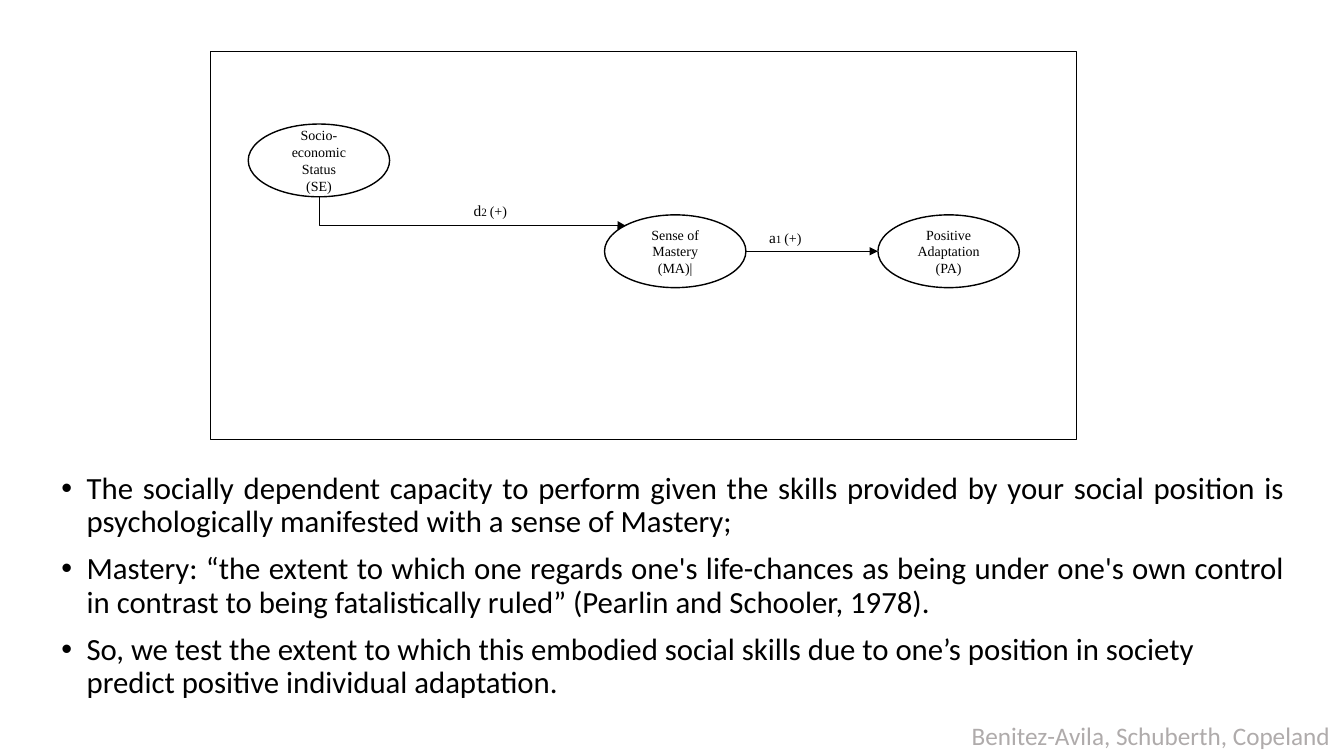
from pptx import Presentation
from pptx.dml.color import RGBColor
from pptx.enum.shapes import MSO_CONNECTOR as Connector, MSO_SHAPE as Shape
from pptx.enum.text import MSO_ANCHOR as Anchor, MSO_AUTO_SIZE as AutoSize, PP_ALIGN as Align
from pptx.oxml.ns import qn
from pptx.oxml.xmlchemy import OxmlElement
from pptx.util import Pt

BLACK, WHITE, GREY = "000000", "FFFFFF", "AFABAB"
SERIF, SANS = "Times New Roman", "Calibri"
OVAL_WIDTH, OVAL_HEIGHT = 101, 52

STATEMENTS = [
    ("The socially dependent capacity to perform given the skills provided by your "
     "social position is psychologically manifested with a sense of Mastery; ", Align.JUSTIFY),
    ("Mastery: “the extent to which one regards one's life-chances as being under one's own "
     "control in contrast to being fatalistically ruled” (Pearlin and Schooler, 1978).",
     Align.JUSTIFY),
    ("So, we test the extent to which this embodied social skills due to one’s position in "
     "society predict positive individual adaptation.", Align.LEFT),
]


def color(value):
    return RGBColor.from_string(value)


def format_run(run, size, font, value=BLACK):
    run.font.size = Pt(size)
    run.font.name = font
    run.font.color.rgb = color(value)


def add_outlined(slide, kind, left, top, width, height, fill=None):
    shape = slide.shapes.add_shape(kind, Pt(left), Pt(top), Pt(width), Pt(height))
    shape.shadow.inherit = False
    if fill:
        shape.fill.solid()
        shape.fill.fore_color.rgb = color(fill)
    else:
        shape.fill.background()
    shape.line.color.rgb = color(BLACK)
    shape.line.width = Pt(1)
    return shape


def add_construct(slide, left, top, text):
    shape = add_outlined(slide, Shape.OVAL, left, top, OVAL_WIDTH, OVAL_HEIGHT, WHITE)
    text_frame = shape.text_frame
    text_frame.text = text
    text_frame.word_wrap = True
    text_frame.vertical_anchor = Anchor.MIDDLE
    for paragraph in text_frame.paragraphs:
        paragraph.alignment = Align.CENTER
        format_run(paragraph.runs[0], 10, SERIF)


def add_arrow(slide, kind, start, end):
    connector = slide.shapes.add_connector(kind, *(Pt(value) for value in start + end))
    connector.line.color.rgb = color(BLACK)
    connector.line.width = Pt(0.5)
    head = OxmlElement("a:tailEnd")
    head.set("type", "triangle")
    connector.line._get_or_add_ln().append(head)
    connector._element.spPr.append(OxmlElement("a:effectLst"))
    return connector


def add_down_then_right_arrow(slide, start, end, bend):
    center_x, center_y = (start[0] + end[0]) / 2, (start[1] + end[1]) / 2
    half_run, half_drop = (end[0] - start[0]) / 2, (end[1] - start[1]) / 2
    connector = add_arrow(slide, Connector.ELBOW,
                          (center_x + half_drop, center_y - half_run),
                          (center_x - half_drop, center_y + half_run))
    properties = connector._element.spPr
    properties.find(qn("a:xfrm")).set("rot", str(270 * 60000))
    geometry = properties.find(qn("a:prstGeom"))
    guides = geometry.find(qn("a:avLst"))
    if guides is None:
        guides = OxmlElement("a:avLst")
        geometry.append(guides)
    guide = OxmlElement("a:gd")
    guide.set("name", "adj1")
    guide.set("fmla", f"val {round(bend * 100000)}")
    guides.append(guide)


def add_path_label(slide, left, top, letter, number):
    box = slide.shapes.add_textbox(Pt(left), Pt(top), Pt(75.6), Pt(20.9))
    box.text_frame.word_wrap = True
    box.text_frame.auto_size = AutoSize.SHAPE_TO_FIT_TEXT
    paragraph = box.text_frame.paragraphs[0]
    for text, size in ((letter, 11), (f"{number} ", 8), ("(+)", 10)):
        run = paragraph.add_run()
        run.text = text
        format_run(run, size, SERIF)


def add_path_model(slide, left, top, width, height):
    add_outlined(slide, Shape.RECTANGLE, left, top, width, height)
    status_left, status_top = left + 26.8, top + 51.6
    mastery_left, adaptation_left = left + 281.3, left + 476.6
    lower_top = top + 116.5
    lower_middle = lower_top + OVAL_HEIGHT / 2
    add_construct(slide, mastery_left, lower_top, "Sense of Mastery\n(MA)|")
    add_construct(slide, adaptation_left, lower_top, "Positive Adaptation\n(PA)")
    add_construct(slide, status_left, status_top, "Socio-economic\nStatus\n(SE)")
    add_arrow(slide, Connector.STRAIGHT,
              (mastery_left + OVAL_WIDTH, lower_middle), (adaptation_left, lower_middle))
    add_down_then_right_arrow(
        slide, (status_left + OVAL_WIDTH / 2, status_top + OVAL_HEIGHT),
        (mastery_left + 15.2, lower_top + 7.8), 0.986)
    add_path_label(slide, left + 391.7, top + 122.4, "a", 1)
    add_path_label(slide, left + 180.7, top + 103, "d", 2)


def add_statements(slide, left, top, width, height):
    body = slide.placeholders[1]
    body.left, body.top, body.width, body.height = Pt(left), Pt(top), Pt(width), Pt(height)
    text_frame = body.text_frame
    text_frame.text = "\n".join(text for text, _ in STATEMENTS)
    text_frame.word_wrap = True
    text_frame.auto_size = AutoSize.NONE
    text_frame.vertical_anchor = Anchor.TOP
    for paragraph, (_, alignment) in zip(text_frame.paragraphs, STATEMENTS):
        paragraph.alignment = alignment
        paragraph.line_spacing = 0.9
        paragraph.space_before = Pt(10)
        properties = paragraph._p.get_or_add_pPr()
        properties.set("marL", str(Pt(18)))
        properties.set("indent", str(-Pt(18)))
        bullet = OxmlElement("a:buChar")
        bullet.set("char", "•")
        properties.append(bullet)
        format_run(paragraph.runs[0], 22, SANS)


def add_authors(slide, left, top, width, height):
    box = slide.shapes.add_textbox(Pt(left), Pt(top), Pt(width), Pt(height))
    box.text_frame.text = "Benitez-Avila, Schuberth, Copeland"
    box.text_frame.word_wrap = False
    box.text_frame.auto_size = AutoSize.SHAPE_TO_FIT_TEXT
    format_run(box.text_frame.paragraphs[0].runs[0], 18, SANS, GREY)


def main():
    presentation = Presentation()
    presentation.slide_width, presentation.slide_height = Pt(960), Pt(540)
    slide = presentation.slides.add_slide(presentation.slide_layouts[1])
    title = slide.shapes.title._element
    title.getparent().remove(title)
    add_path_model(slide, 150.5, 37, 618.5, 277)
    add_statements(slide, 36.7, 334, 888, 170.6)
    add_authors(slide, 687, 511, 273.5, 29)
    presentation.save("out.pptx")


if __name__ == "__main__":
    main()
